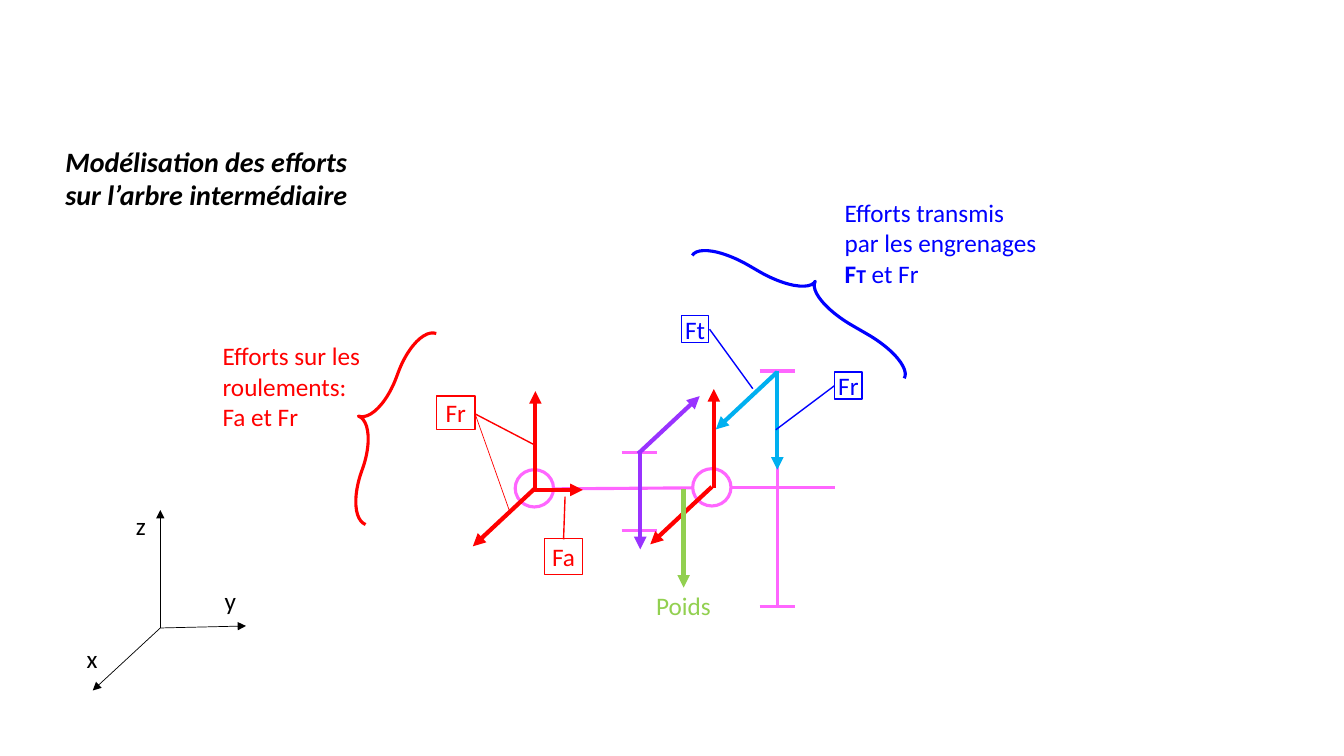
from lxml import etree
from pptx import Presentation
from pptx.dml.color import RGBColor
from pptx.enum import shapes, text
from pptx.oxml.ns import qn
from pptx.util import Inches, Pt

COLORS = {
    "black": "000000", "white": "FFFFFF", "pink": "FF66FF", "red": "FF0000",
    "blue": "0000FF", "cyan": "00B0F0", "purple": "9933FF", "green": "92D050",
}
FONT = "Calibri"

BEARINGS = [(6.87, 4.65), (5.11, 4.66)]
BEARING_SIZE = (0.38, 0.37)
SHAFT = [((5.49, 4.85), (6.87, 4.84)), ((7.25, 4.84), (8.28, 4.84))]
GEARS = [(6.34, 4.49, 5.26), (7.71, 3.68, 6.02)]
TOOTH = 0.35

UP, DOWN = (0, -0.98), (0, 0.98)
FRONT, BACK, SIDE = (-0.61, 0.57), (0.61, -0.57), (0.48, 0)
FORCES = [
    ((5.31, 4.86), UP, "red"),
    ((5.3, 4.85), FRONT, "red"),
    ((7.08, 4.84), UP, "red"),
    ((7.06, 4.83), FRONT, "red"),
    ((5.3, 4.86), SIDE, "red"),
    ((6.78, 4.85), DOWN, "green"),
    ((7.71, 3.68), DOWN, "cyan"),
    ((7.71, 3.69), FRONT, "cyan"),
    ((6.33, 4.5), BACK, "purple"),
    ((6.35, 4.47), DOWN, "purple"),
]
ORIGIN = (1.59, 6.23)
AXES = [(0, -1.17), (0.85, -0.02), (-0.67, 0.62)]

CALLOUTS = [
    ("Fr", (8.28, 3.69, 0.27, 0.27), (0.507, -0.012, 2.125, -2.166), "blue", None),
    ("Ft", (6.76, 3.13, 0.27, 0.27), (0.507, 1.032, 2.69, 2.617), "blue", None),
    ("Fr", (4.33, 3.93, 0.38, 0.33), (0.529, 0.995, 1.454, 2.535), "red", "white"),
    ("Fa", (5.4, 5.34, 0.38, 0.36), (0.034, 0.499, -1.15, 0.538), "red", "white"),
]
BRACES = [
    ((7.82, 1.76, 0.39, 2.43), 120.1, "blue"),
    ((3.55, 3.17, 0.44, 2.02), 20.3, "red"),
]
LABELS = [
    (["x"], (0.76, 6.33, 0.31, 0.4), "black"),
    (["y"], (2.13, 5.76, 0.32, 0.4), "black"),
    (["z"], (1.25, 5.01, 0.31, 0.4), "black"),
    (["Poids"], (6.41, 5.81, 0.76, 0.4), "green"),
    (["Efforts sur les", "roulements:", "Fa et Fr"], (2.11, 3.33, 1.64, 1.01), "red"),
]
GEAR_LABEL = ["Efforts transmis", "par les engrenages"]
GEAR_SYMBOLS = [("F", 18, True), ("T", 14, True), (" et Fr", 18, False)]
TITLE = ["Modélisation des efforts", "sur l’arbre intermédiaire"]


def rgb(name):
    return RGBColor.from_string(COLORS[name])


def inches(values):
    return [Inches(v) for v in values]


def add_line(start, end, color, width, arrow=False):
    line = slide.shapes.add_connector(
        shapes.MSO_CONNECTOR.STRAIGHT, *inches(start + end))
    line.line.color.rgb = rgb(color)
    line.line.width = Pt(width)
    if arrow:
        etree.SubElement(line.line._get_or_add_ln(), qn("a:tailEnd"), type="triangle")
    etree.SubElement(line._element.spPr, qn("a:effectLst"))


def add_vector(start, step, color, width):
    end = (start[0] + step[0], start[1] + step[1])
    add_line(start, end, color, width, arrow=True)


def add_outline(kind, box, color, width, fill=None, adjustments=()):
    shape = slide.shapes.add_shape(kind, *inches(box))
    shape.shadow.inherit = False
    if fill:
        shape.fill.solid()
        shape.fill.fore_color.rgb = rgb(fill)
    else:
        shape.fill.background()
    shape.line.color.rgb = rgb(color)
    shape.line.width = Pt(width)
    for i, value in enumerate(adjustments):
        shape.adjustments[i] = value
    return shape


def style(font, color, size=18):
    font.name = FONT
    font.size = Pt(size)
    font.color.rgb = rgb(color)


def add_label(lines, box, color, size=18):
    frame = slide.shapes.add_textbox(*inches(box)).text_frame
    frame.word_wrap = False
    frame.auto_size = text.MSO_AUTO_SIZE.SHAPE_TO_FIT_TEXT
    frame.text = "\n".join(lines)
    for paragraph in frame.paragraphs:
        style(paragraph.font, color, size)
    return frame


prs = Presentation()
prs.slide_width, prs.slide_height = Inches(13.33), Inches(7.5)
slide = prs.slides.add_slide(prs.slide_layouts[6])

for corner in BEARINGS:
    add_outline(shapes.MSO_SHAPE.OVAL, corner + BEARING_SIZE, "pink", 2.25, "white")
for x, top, bottom in GEARS:
    add_line((x, top), (x, bottom), "pink", 2.25)
    for y in (top, bottom):
        add_line((x - TOOTH / 2, y), (x + TOOTH / 2, y), "pink", 2.25)
for start, end in SHAFT:
    add_line(start, end, "pink", 2.25)
for start, step, color in FORCES:
    add_vector(start, step, color, 3)
for step in AXES:
    add_vector(ORIGIN, step, "black", 0.5)

for name, box, pointer, color, fill in CALLOUTS:
    callout = add_outline(
        shapes.MSO_SHAPE.LINE_CALLOUT_1, box, color, 1, fill, pointer)
    frame = callout.text_frame
    frame.margin_left = frame.margin_right = frame.margin_top = frame.margin_bottom = 0
    frame.vertical_anchor = text.MSO_ANCHOR.MIDDLE
    frame.text = name
    frame.paragraphs[0].alignment = text.PP_ALIGN.CENTER
    style(frame.paragraphs[0].font, color)
for box, angle, color in BRACES:
    brace = add_outline(
        shapes.MSO_SHAPE.LEFT_BRACE, box, color, 2.25, adjustments=(1.361, 0.513))
    brace.rotation = angle
add_line((4.71, 4.1), (5.05, 5.06), "red", 0.5)

for lines, box, color in LABELS:
    add_label(lines, box, color)
symbols = add_label(GEAR_LABEL, (8.28, 1.91, 2.13, 1.01), "blue").add_paragraph()
for part, size, bold in GEAR_SYMBOLS:
    run = symbols.add_run()
    run.text = part
    run.font.bold = bold
    style(run.font, "blue", size)
for paragraph in add_label(TITLE, (0.55, 1.38, 3.14, 0.77), "black", 20).paragraphs:
    paragraph.font.bold = paragraph.font.italic = True

prs.save("out.pptx")
